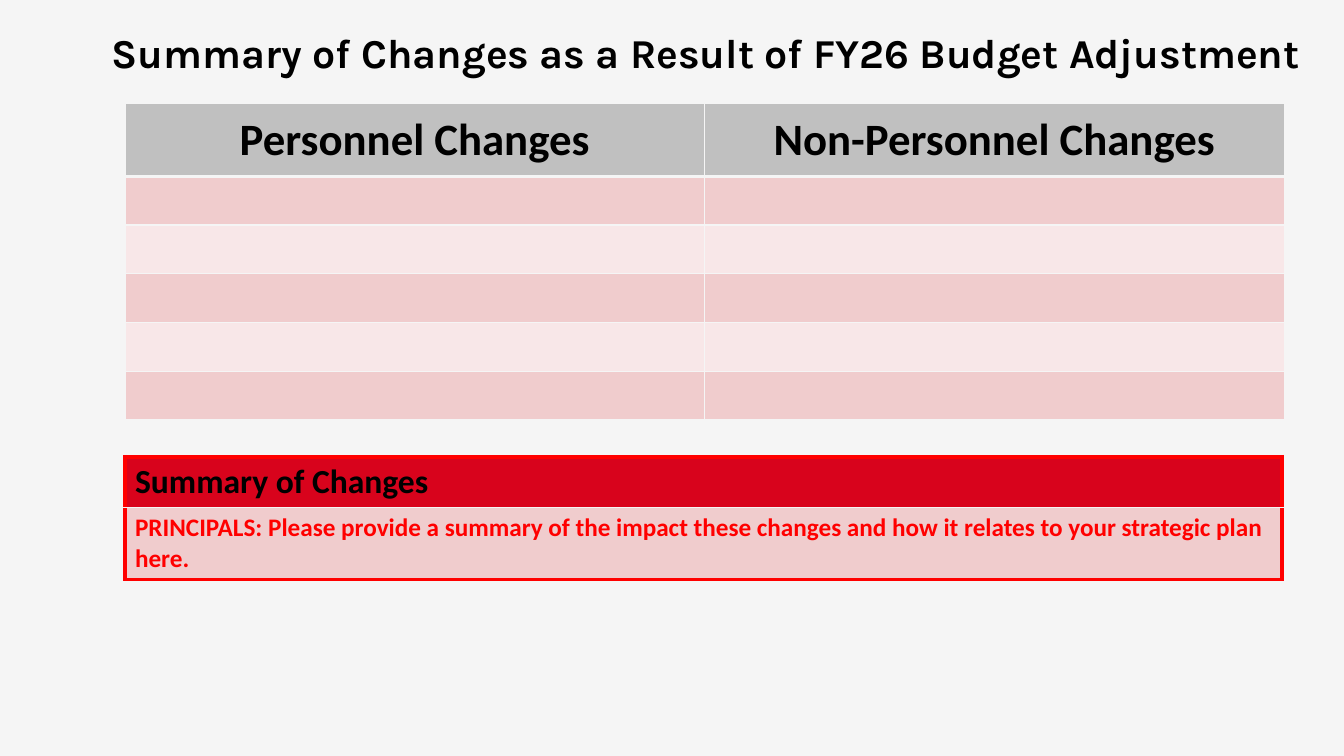
from dataclasses import dataclass

from lxml import etree
from pptx import Presentation
from pptx.dml.color import RGBColor
from pptx.enum import text
from pptx.oxml import ns
from pptx.util import Pt

PAPER, BLACK, RED = "F5F5F5", "000000", "FF0000"
GREY, CRIMSON, PINK, PALE = "C0C0C0", "D8031C", "F0CCCD", "F8E7E8"
THIN, THICK = (PAPER, 1), (RED, 3)


@dataclass
class Row:
    height: float
    fill: str
    labels: tuple[str, ...]
    borders: dict[str, tuple[str, float]]
    size: float = 18
    color: str = BLACK
    align: text.PP_ALIGN = text.PP_ALIGN.LEFT
    anchor: text.MSO_ANCHOR = text.MSO_ANCHOR.TOP


@dataclass
class Grid:
    left: float
    top: float
    col_width: float
    rows: list[Row]


def rgb(color: str) -> RGBColor:
    return RGBColor.from_string(color)


def set_attrs(target, values: dict) -> None:
    for name, value in values.items():
        setattr(target, name, value)


def write(p, label: str, font: str, size: float, color: str, align) -> None:
    p.alignment = align
    r = p.add_run()
    r.text = label
    set_attrs(r.font, {"name": font, "size": Pt(size), "bold": True})
    r.font.color.rgb = rgb(color)


def set_borders(cell, borders: dict[str, tuple[str, float]]) -> None:
    tc_pr = cell._tc.get_or_add_tcPr()
    for i, side in enumerate("LRTB"):
        color, width = borders[side]
        ln = etree.Element(ns.qn(f"a:ln{side}"), w=str(Pt(width)))
        fill = etree.SubElement(ln, ns.qn("a:solidFill"))
        etree.SubElement(fill, ns.qn("a:srgbClr"), val=color)
        tc_pr.insert(i, ln)


def draw_grid(s, grid: Grid) -> None:
    cols = len(grid.rows[0].labels)
    table = s.shapes.add_table(
        len(grid.rows), cols, Pt(grid.left), Pt(grid.top),
        Pt(grid.col_width * cols), Pt(sum(row.height for row in grid.rows)),
    ).table
    for i, row in enumerate(grid.rows):
        table.rows[i].height = Pt(row.height)
        for j, label in enumerate(row.labels):
            cell = table.cell(i, j)
            cell.fill.solid()
            cell.fill.fore_color.rgb = rgb(row.fill)
            cell.vertical_anchor = row.anchor
            set_borders(cell, row.borders)
            if label:
                write(cell.text_frame.paragraphs[0], label, "Calibri",
                      row.size, row.color, row.align)


def draw_title(s, label: str) -> None:
    sp = s.shapes.title
    set_attrs(sp, {"left": Pt(72), "top": Pt(15.8),
                   "width": Pt(864), "height": Pt(66.2)})
    tf = sp.text_frame
    set_attrs(tf, {"word_wrap": False, "auto_size": text.MSO_AUTO_SIZE.NONE,
                   "vertical_anchor": text.MSO_ANCHOR.TOP})
    write(tf.paragraphs[0], label, "Karla", 29.3, BLACK, text.PP_ALIGN.CENTER)


def main() -> None:
    prs = Presentation()
    set_attrs(prs, {"slide_width": Pt(960), "slide_height": Pt(540)})
    s = prs.slides.add_slide(prs.slide_layouts[5])
    s.background.fill.solid()
    s.background.fill.fore_color.rgb = rgb(PAPER)
    draw_title(s, "Summary of Changes as a Result of FY26 Budget Adjustment")

    thin = dict.fromkeys("LRTB", THIN)
    header = Row(51.8, GREY, ("Personnel Changes", "Non-Personnel Changes"),
                 thin | {"B": (PAPER, 3)}, 32, BLACK,
                 text.PP_ALIGN.CENTER, text.MSO_ANCHOR.MIDDLE)
    bands = [Row(34.8, PALE if i % 2 else PINK, ("", ""),
                 thin if i else thin | {"T": (PAPER, 3)}) for i in range(5)]
    draw_grid(s, Grid(89.3, 74.2, 414, [header, *bands]))

    thick = dict.fromkeys("LRTB", THICK)
    draw_grid(s, Grid(89.3, 326.2, 826.6, [
        Row(36, CRIMSON, ("Summary of Changes",), thick | {"B": THIN}, 24),
        Row(50.4, PINK, (
            "PRINCIPALS: Please provide a summary of the impact these changes "
            "and how it relates to your strategic plan here.",
        ), thick | {"T": THIN}, 18, RED),
    ]))
    prs.save("out.pptx")


if __name__ == "__main__":
    main()
